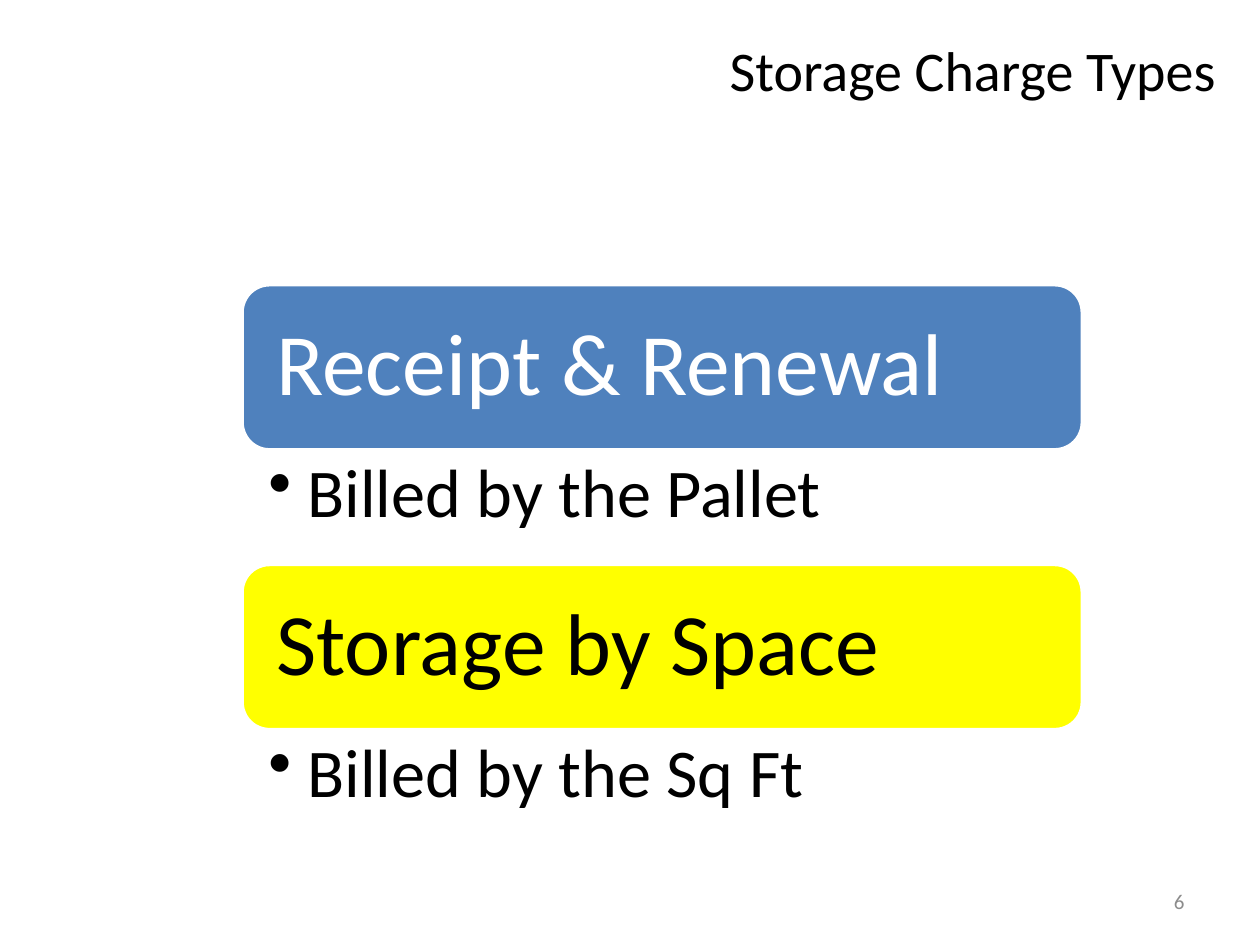
import pptx
import pptx.dml.color
import pptx.enum.shapes
import pptx.enum.text
import pptx.oxml.ns
import pptx.util
from lxml import etree

Cm = pptx.util.Cm
ALIGN = pptx.enum.text.PP_ALIGN
ANCHOR = pptx.enum.text.MSO_ANCHOR

LEFT, WIDTH = 4.88, 16.94
TOP, HEADER_H, DETAIL_H = 5.74, 3.33, 2.31
CHARGE_TYPES = [
    ("Receipt & Renewal", "Billed by the Pallet", "4F81BD", "FFFFFF"),
    ("Storage by Space", "Billed by the Sq Ft", "FFFF00", "000000"),
]


def rgb(value):
    return pptx.dml.color.RGBColor.from_string(value)


def add_bullet(p, indent):
    """Give the paragraph a round bullet with a hanging indent in cm."""
    pPr = p._p.get_or_add_pPr()
    pPr.set("marL", str(Cm(indent)))
    pPr.set("indent", str(-Cm(indent)))
    bullet = etree.SubElement(pPr, pptx.oxml.ns.qn("a:buChar"))
    bullet.set("char", "•")


def write(s, text, size, color="000000", align=ALIGN.LEFT, anchor=ANCHOR.MIDDLE,
          insets=(0.25, 0.13, 0.25, 0.13), spacing=None, indent=None):
    """Fill a shape with one paragraph; insets are left, top, right, bottom in cm."""
    tf = s.text_frame
    tf.word_wrap = True
    tf.vertical_anchor = anchor
    tf.margin_left, tf.margin_top, tf.margin_right, tf.margin_bottom = map(Cm, insets)
    p = tf.paragraphs[0]
    if indent:
        add_bullet(p, indent)
    p.alignment = align
    p.line_spacing = spacing
    r = p.add_run()
    r.text = text
    r.font.name = "Calibri"
    r.font.size = pptx.util.Pt(size)
    r.font.color.rgb = rgb(color)


def add_text(slide, box, text, size, **fmt):
    write(slide.shapes.add_textbox(*map(Cm, box)), text, size, **fmt)


def add_header(slide, box, text, fill, color):
    s = slide.shapes.add_shape(
        pptx.enum.shapes.MSO_SHAPE.ROUNDED_RECTANGLE, *map(Cm, box))
    s.shadow.inherit = False
    s.fill.solid()
    s.fill.fore_color.rgb = rgb(fill)
    s.line.color.rgb = rgb("FFFFFF")
    s.line.width = pptx.util.Pt(2)
    write(s, text, 50, color=color, spacing=0.9, insets=(0.53, 0.53, 0.53, 0.53))


def main():
    prs = pptx.Presentation()
    prs.slide_width, prs.slide_height = Cm(25.4), Cm(19.05)
    slide = prs.slides.add_slide(prs.slide_layouts[6])

    add_text(slide, (1.9, -0.2, 22.86, 3.18), "Storage Charge Types", 32,
             align=ALIGN.RIGHT)
    for i, (name, detail, fill, color) in enumerate(CHARGE_TYPES):
        top = TOP + i * (HEADER_H + DETAIL_H)
        add_header(slide, (LEFT, top, WIDTH, HEADER_H), name, fill, color)
        add_text(slide, (LEFT, top + HEADER_H, WIDTH, DETAIL_H), detail, 39,
                 anchor=ANCHOR.TOP, insets=(0.53, 0.18, 0.99, 0.18),
                 spacing=0.9, indent=0.79)
    add_text(slide, (18.2, 17.65, 5.93, 1.02), "6", 12, color="8C8C8C",
             align=ALIGN.RIGHT)
    prs.save("out.pptx")


if __name__ == "__main__":
    main()
